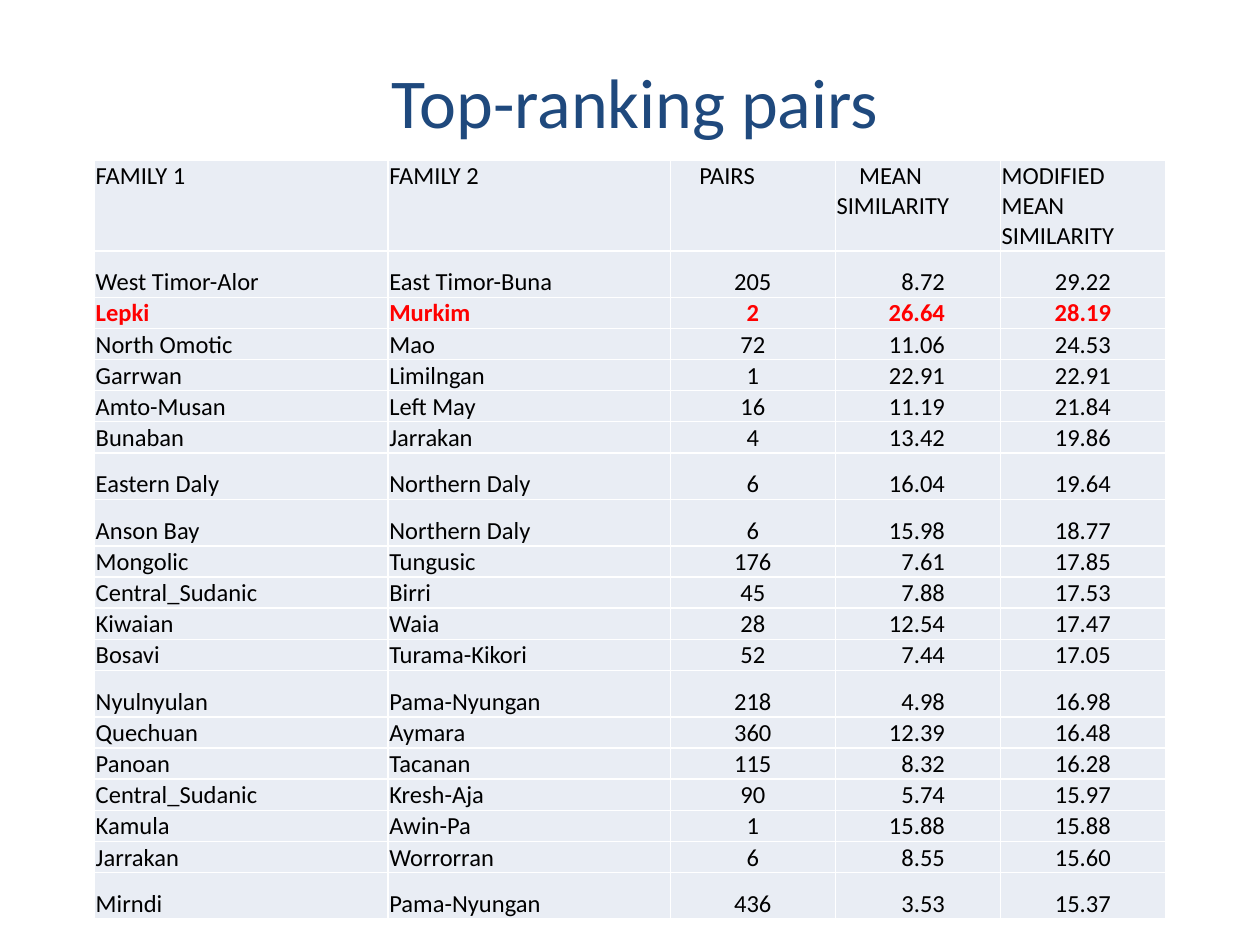
from lxml.etree import SubElement
from pptx import Presentation
from pptx.dml.color import RGBColor
from pptx.enum.text import MSO_ANCHOR, PP_ALIGN
from pptx.oxml.ns import qn
from pptx.util import Inches, Pt

TITLE = "Top-ranking pairs"
HEADINGS = ["FAMILY 1", "FAMILY 2", "PAIRS", "MEAN SIMILARITY", "MODIFIED MEAN\nSIMILARITY"]
PAIRS = [
    ("West Timor-Alor", "East Timor-Buna", "205", "8.72", "29.22"),
    ("Lepki", "Murkim", "2", "26.64", "28.19"),
    ("North Omotic", "Mao", "72", "11.06", "24.53"),
    ("Garrwan", "Limilngan", "1", "22.91", "22.91"),
    ("Amto-Musan", "Left May", "16", "11.19", "21.84"),
    ("Bunaban", "Jarrakan", "4", "13.42", "19.86"),
    ("Eastern Daly", "Northern Daly", "6", "16.04", "19.64"),
    ("Anson Bay", "Northern Daly", "6", "15.98", "18.77"),
    ("Mongolic", "Tungusic", "176", "7.61", "17.85"),
    ("Central_Sudanic", "Birri", "45", "7.88", "17.53"),
    ("Kiwaian", "Waia", "28", "12.54", "17.47"),
    ("Bosavi", "Turama-Kikori", "52", "7.44", "17.05"),
    ("Nyulnyulan", "Pama-Nyungan", "218", "4.98", "16.98"),
    ("Quechuan", "Aymara", "360", "12.39", "16.48"),
    ("Panoan", "Tacanan", "115", "8.32", "16.28"),
    ("Central_Sudanic", "Kresh-Aja", "90", "5.74", "15.97"),
    ("Kamula", "Awin-Pa", "1", "15.88", "15.88"),
    ("Jarrakan", "Worrorran", "6", "8.55", "15.60"),
    ("Mirndi", "Pama-Nyungan", "436", "3.53", "15.37"),
]
HIGHLIGHTED = "Lepki"
TALL_ROWS = {1, 7, 8, 13, 19}
HEADING_HEIGHT, TALL_HEIGHT, ROW_HEIGHT = 0.72, 0.37, 0.24
COLUMN_WIDTHS = [2.33, 2.24, 1.31, 1.31, 1.31]
COLUMN_ALIGNMENTS = [PP_ALIGN.LEFT, PP_ALIGN.LEFT, PP_ALIGN.CENTER, PP_ALIGN.RIGHT, PP_ALIGN.CENTER]
HEADING_INDENTS = {2: 0.22, 3: 0.18}
DECIMAL_INSET = 0.44
CELL_FORMAT = {"margin_left": Inches(0.01), "margin_right": Inches(0.01),
               "margin_top": Inches(0.01), "margin_bottom": 0}


def colour(value):
    return RGBColor.from_string(value)


def set_format(target, values):
    for attribute, value in values.items():
        setattr(target, attribute, value)


def style_font(font, size, value, bold=False):
    set_format(font, {"name": "Calibri", "size": Pt(size), "bold": bold})
    font.color.rgb = colour(value)


def add_borders(cell):
    properties = cell._tc.get_or_add_tcPr()
    for side in ("lnL", "lnR", "lnT", "lnB"):
        line = SubElement(properties, qn(f"a:{side}"), w=str(Pt(1)))
        SubElement(SubElement(line, qn("a:solidFill")), qn("a:srgbClr"), val="FFFFFF")


def fill_cell(cell, wording, row, column, highlighted):
    heading = row == 0
    alignment = PP_ALIGN.LEFT if heading else COLUMN_ALIGNMENTS[column]
    cell.text = wording
    set_format(cell, CELL_FORMAT)
    cell.vertical_anchor = MSO_ANCHOR.TOP if heading else MSO_ANCHOR.BOTTOM
    if alignment == PP_ALIGN.RIGHT:
        cell.margin_right = Inches(DECIMAL_INSET)
    add_borders(cell)
    cell.fill.solid()
    cell.fill.fore_color.rgb = colour("E9EDF4")
    for paragraph in cell.text_frame.paragraphs:
        paragraph.alignment = alignment
        if heading and column in HEADING_INDENTS:
            paragraph._p.get_or_add_pPr().set("indent", str(Inches(HEADING_INDENTS[column])))
        for run in paragraph.runs:
            style_font(run.font, 14, "FF0000" if highlighted else "000000", highlighted)


def row_height(row):
    if row == 0:
        return HEADING_HEIGHT
    return TALL_HEIGHT if row in TALL_ROWS else ROW_HEIGHT


def main():
    """Build the slide of top-ranking language family pairs."""
    presentation = Presentation()
    set_format(presentation, {"slide_width": Inches(10), "slide_height": Inches(7.5)})
    slide = presentation.slides.add_slide(presentation.slide_layouts[5])

    title = slide.shapes.title
    set_format(title, {"left": 0, "top": Inches(0.17), "width": Inches(10.08), "height": Inches(1.25)})
    title.text_frame.text = TITLE
    title.text_frame.vertical_anchor = MSO_ANCHOR.MIDDLE
    heading = title.text_frame.paragraphs[0]
    heading.alignment = PP_ALIGN.CENTER
    style_font(heading.runs[0].font, 40, "1F497D")

    rows = [HEADINGS, *PAIRS]
    heights = [row_height(row) for row in range(len(rows))]
    ranking = slide.shapes.add_table(len(rows), len(HEADINGS), Inches(0.75), Inches(1.27),
                                     Inches(sum(COLUMN_WIDTHS)), Inches(sum(heights))).table
    set_format(ranking, {"first_row": False, "horz_banding": False})
    for column, width in zip(ranking.columns, COLUMN_WIDTHS):
        column.width = Inches(width)
    for row, wordings in enumerate(rows):
        ranking.rows[row].height = Inches(heights[row])
        for column, wording in enumerate(wordings):
            fill_cell(ranking.cell(row, column), wording, row, column, wordings[0] == HIGHLIGHTED)

    presentation.save("out.pptx")


if __name__ == "__main__":
    main()
